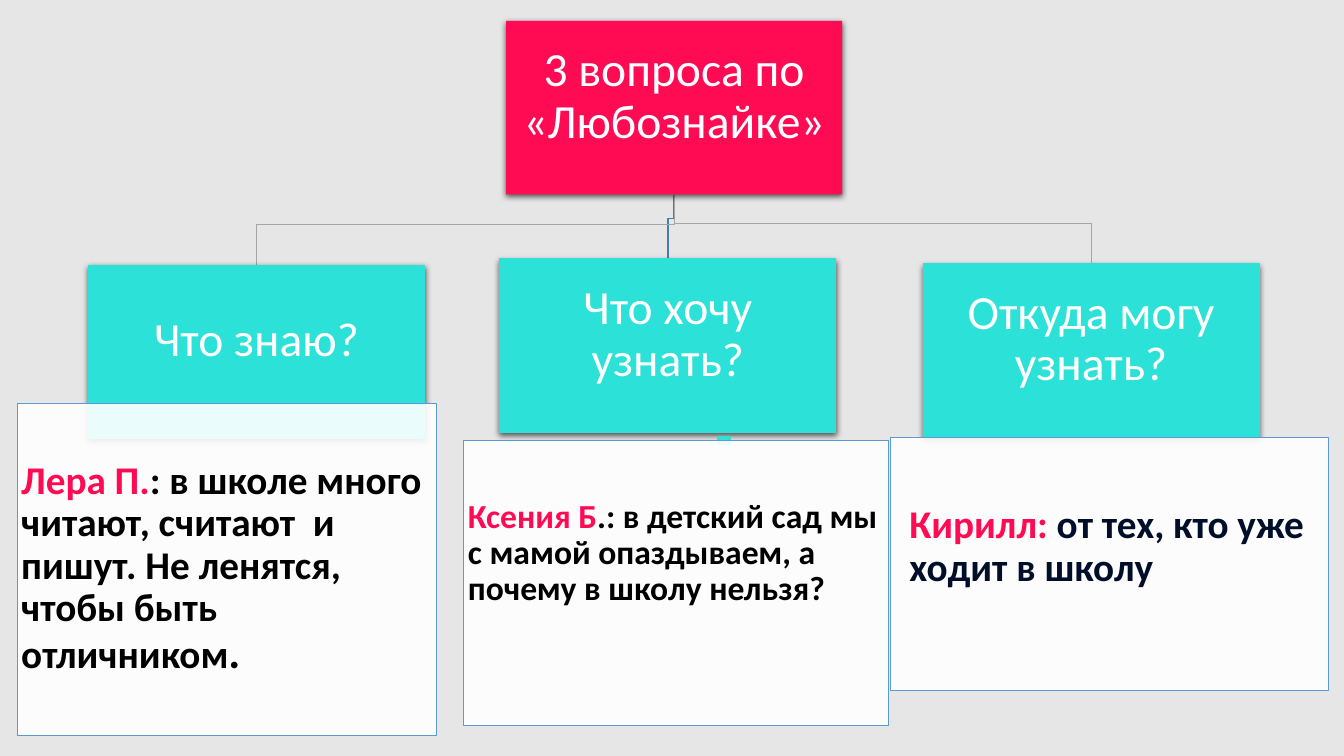
"""Build a slide with three questions and the children's answers."""
from lxml import etree
from pptx import Presentation
from pptx.dml.color import RGBColor
from pptx.enum.shapes import MSO_SHAPE
from pptx.enum.text import MSO_ANCHOR, PP_ALIGN
from pptx.oxml.ns import qn
from pptx.util import Pt

RECT = MSO_SHAPE.RECTANGLE
MIDDLE = MSO_ANCHOR.MIDDLE
LEFT, CENTER = PP_ALIGN.LEFT, PP_ALIGN.CENTER

BACKGROUND = RGBColor(0xE7, 0xE6, 0xE6)
PINK = RGBColor(0xFF, 0x0B, 0x53)
TEAL = RGBColor(0x2B, 0xE1, 0xD8)
WHITE = RGBColor(0xFF, 0xFF, 0xFF)
BLACK = RGBColor(0x00, 0x00, 0x00)
NAVY = RGBColor(0x00, 0x0E, 0x2A)
GRAY = RGBColor(0xA5, 0xA5, 0xA5)
STEEL = RGBColor(0x49, 0x7C, 0xAB)
BLUE = RGBColor(0x5B, 0x9B, 0xD5)

FONT = "Calibri"
CARD_W, CARD_H = 240, 124
ROOT_X, ROOT_Y = 361.5, 15
ELBOW_RISE = 28.8

QUESTIONS = [
    ("Что знаю?", 63.2, 189.4, GRAY, 0.5),
    ("Что хочу узнать?", 357, 185, STEEL, 1),
    ("Откуда могу узнать?", 659.3, 188.5, GRAY, 0.5),
]

ANSWERS = [
    ((12.2, 288, 299.5, 237.6), (3, 1, 3, 1), [
        ("Лера П.", 28, PINK),
        (": в школе много читают, считают  и пишут. "
         "Не ленятся, чтобы быть отличником", 28, BLACK),
        (".", 32, BLACK)]),
    ((331.2, 314.6, 303.1, 203.8), (3, 1, 3, 43), [
        ("Ксения Б", 24, PINK),
        (".: в детский сад мы с мамой опаздываем, "
         "а почему в школу нельзя?", 24, BLACK)]),
    ((635.8, 312.5, 313.2, 180.7), (13.7, 1, 0, 25), [
        ("Кирилл: ", 28, PINK),
        ("от тех, кто уже ходит в школу", 28, NAVY)]),
]


def add_box(slide, bounds, fill, line=None, width=0.5):
    """Add a filled rectangle without the theme shadow."""
    sp = slide.shapes.add_shape(RECT, *map(Pt, bounds))
    sp.shadow.inherit = False
    sp.fill.solid()
    sp.fill.fore_color.rgb = fill
    if line is None:
        sp.line.fill.background()
    else:
        sp.line.color.rgb = line
        sp.line.width = Pt(width)
    return sp


def add_alpha(color, percent):
    """Set the opacity of a colour element."""
    etree.SubElement(color, qn("a:alpha"), val=str(percent * 1000))


def make_translucent(sp):
    """Make the fill of a shape 90 percent opaque."""
    add_alpha(sp._element.spPr.find(qn("a:solidFill"))[0], 90)


def add_shadow(sp):
    """Give a shape a soft shadow below it."""
    effects = sp._element.spPr.find(qn("a:effectLst"))
    shadow = etree.SubElement(
        effects, qn("a:outerShdw"), blurRad=str(Pt(4.5)), dist=str(Pt(1.5)),
        dir="5400000", algn="ctr", rotWithShape="0")
    add_alpha(etree.SubElement(shadow, qn("a:srgbClr"), val=str(BLACK)), 63)


def first_paragraph(sp, insets, align):
    """Prepare the text frame of a shape and return its paragraph."""
    tf = sp.text_frame
    tf.word_wrap = True
    tf.vertical_anchor = MIDDLE
    tf.margin_left, tf.margin_top, tf.margin_right, tf.margin_bottom = map(Pt, insets)
    p = tf.paragraphs[0]
    p.alignment = align
    p.line_spacing = 0.9
    p.font.name = FONT
    return p


def add_card(slide, text, x, y, fill, line=None):
    """Add a heading card with a shadow."""
    sp = add_box(slide, (x, y, CARD_W, CARD_H), fill, line, 0.75)
    add_shadow(sp)
    p = first_paragraph(sp, (1.5, 1.5, 1.5, 17), CENTER)
    p.add_run().text = text
    p.font.size = Pt(34)
    p.font.color.rgb = WHITE


def add_branch(slide, x, y, color, width):
    """Draw a bent line from the root card to the top of a question card."""
    start_x, start_y = ROOT_X + CARD_W / 2, ROOT_Y + CARD_H
    end_x, bend_y = x + CARD_W / 2, y - ELBOW_RISE
    builder = slide.shapes.build_freeform(Pt(start_x), Pt(start_y))
    corners = [(start_x, bend_y), (end_x, bend_y), (end_x, y)]
    builder.add_line_segments([(Pt(a), Pt(b)) for a, b in corners], close=False)
    sp = builder.convert_to_shape()
    sp.shadow.inherit = False
    sp.fill.background()
    sp.line.color.rgb = color
    sp.line.width = Pt(width)


def add_answer(slide, bounds, insets, runs):
    """Add a white panel with a child's answer."""
    sp = add_box(slide, bounds, WHITE, BLUE)
    make_translucent(sp)
    p = first_paragraph(sp, insets, LEFT)
    p.font.bold = True
    for text, size, color in runs:
        r = p.add_run()
        r.text = text
        r.font.size = Pt(size)
        r.font.color.rgb = color


def main():
    """Build and save the slide."""
    prs = Presentation()
    prs.slide_width, prs.slide_height = Pt(960), Pt(540)
    slide = prs.slides.add_slide(prs.slide_layouts[6])
    slide.background.fill.solid()
    slide.background.fill.fore_color.rgb = BACKGROUND

    for _, x, y, color, width in reversed(QUESTIONS):
        add_branch(slide, x, y, color, width)
    add_card(slide, "3 вопроса по «Любознайке»", ROOT_X, ROOT_Y, PINK)
    for text, x, y, _, _ in QUESTIONS:
        add_card(slide, text, x, y, TEAL, TEAL)
    make_translucent(add_box(slide, (512.6, 311.8, 9.4, 5.8), TEAL, TEAL))
    for bounds, insets, runs in ANSWERS:
        add_answer(slide, bounds, insets, runs)

    prs.save("out.pptx")


if __name__ == "__main__":
    main()
